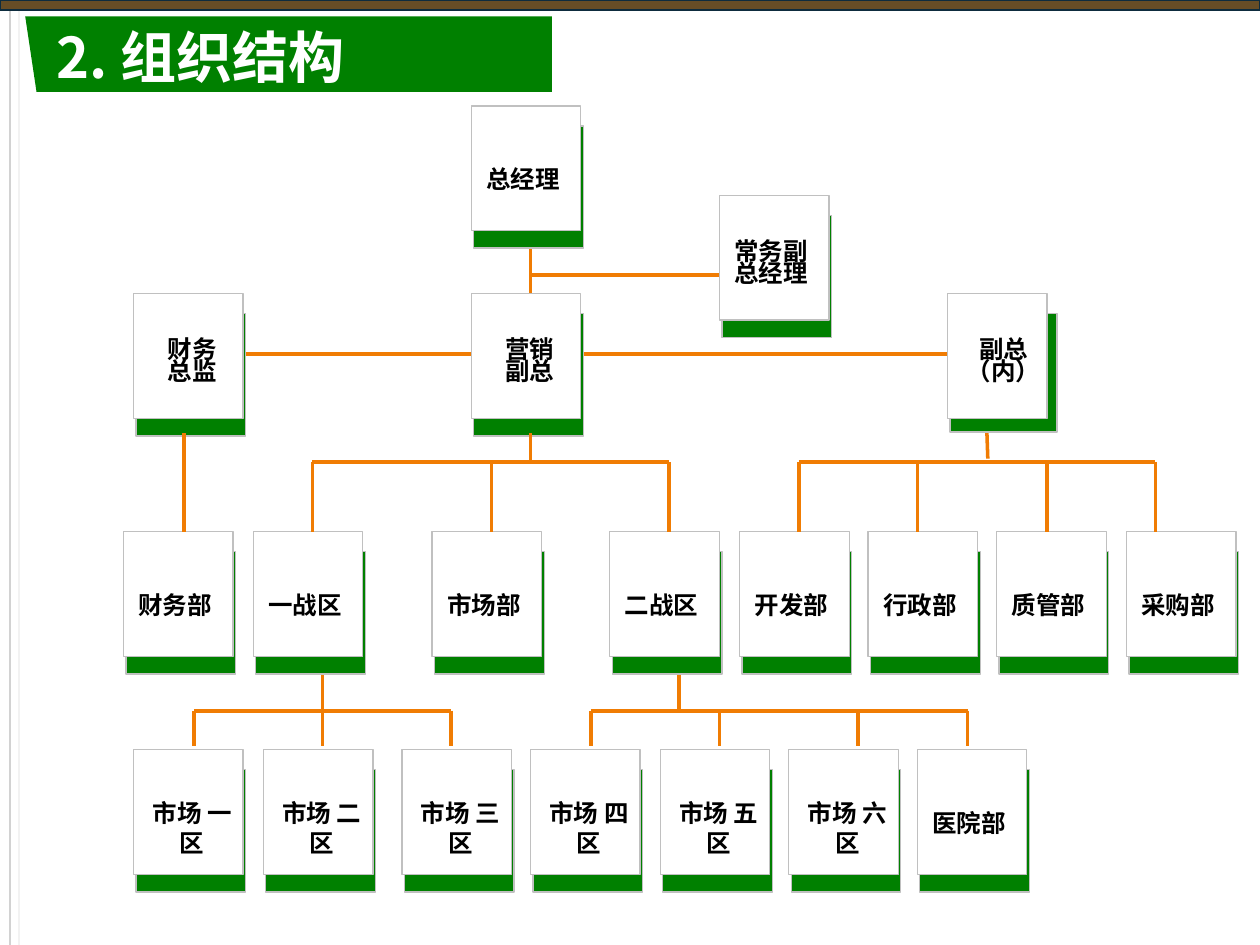
from pptx import Presentation
from pptx.dml.color import RGBColor
from pptx.enum.shapes import MSO_CONNECTOR as Connector, MSO_SHAPE as Shape
from pptx.enum.text import MSO_ANCHOR as Anchor, PP_ALIGN as Align
from pptx.oxml.ns import qn
from pptx.util import Inches, Pt
from lxml import etree

THEME = {
    "font": "Noto Sans CJK SC",
    "title_size": 32, "label_size": 14,
    "green": "008000", "orange": "F07C03", "white": "FFFFFF", "black": "000000",
    "card_line": "C0C0C0", "bar": "674D26", "bar_line": "0E2C3E",
    "pale": "F2F2F2", "grey": "A6A6A6",
}
TITLE = "2. 组织结构"
BANNER = [(0.2, 0.13), (4.38, 0.13), (4.38, 0.73), (0.29, 0.73)]

CARD_ROWS = [
    (0.84, [(3.74, ["总经理"], Align.LEFT)]),
    (1.55, [(5.71, ["常务副", "总经理"], Align.LEFT)]),
    (2.33, [(1.06, ["财务", "总监"], Align.CENTER),
            (3.74, ["营销", "副总"], Align.CENTER),
            (7.52, ["副总", "（内）"], Align.CENTER)]),
    (4.22, [(0.98, ["财务部"], Align.LEFT), (2.01, ["一战区"], Align.LEFT),
            (3.43, ["市场部"], Align.LEFT), (4.84, ["二战区"], Align.LEFT),
            (5.87, ["开发部"], Align.LEFT), (6.89, ["行政部"], Align.LEFT),
            (7.91, ["质管部"], Align.LEFT), (8.94, ["采购部"], Align.LEFT)]),
    (5.95, [(1.06, ["市场 一区"], Align.CENTER), (2.09, ["市场 二区"], Align.CENTER),
            (3.19, ["市场 三区"], Align.CENTER), (4.21, ["市场 四区"], Align.CENTER),
            (5.24, ["市场 五区"], Align.CENTER), (6.26, ["市场 六区"], Align.CENTER),
            (7.28, ["医院部"], Align.LEFT)]),
]
CARD = {"face": (0.87, 0.99), "back": (0.87, 0.97), "text": 0.89}
NARROW_CARD = {"face": (0.79, 0.99), "back": (0.85, 0.94), "text": 0.85}
NARROW_LABEL = "（内）"
TEXT_HEIGHT = 0.8

BACK_LINKS = [
    (5.39, 5.25, 5.39, 5.64, 2), (2.56, 5.32, 2.56, 5.64, 2),
    (4.21, 1.94, 4.21, 2.33, 2), (7.83, 3.36, 7.84, 3.64, 2),
    (1.93, 2.81, 7.6, 2.81, 2.25), (4.21, 2.18, 5.71, 2.18, 2.25),
]
FRONT_LINKS = [(4.21, 3.44, 4.21, 3.67, 2), (1.46, 3.44, 1.46, 4.22, 2)]
BRANCHES = [
    (3.67, 4.22, [2.48, 3.9, 5.31]),
    (3.67, 4.22, [6.34, 7.28, 8.31, 9.17]),
    (5.64, 5.92, [1.54, 2.56, 3.58]),
    (5.64, 5.92, [4.69, 5.71, 6.81, 7.68]),
]


def color(name):
    return RGBColor.from_string(THEME[name])


def paint(shape, fill, line=None, width=0.75):
    shape.shadow.inherit = False
    shape.fill.solid()
    shape.fill.fore_color.rgb = color(fill)
    if line:
        shape.line.color.rgb = color(line)
        shape.line.width = Pt(width)
    else:
        shape.line.fill.background()


def add_rectangle(shapes, left, top, width, height, fill, line, line_width=0.75):
    shape = shapes.add_shape(Shape.RECTANGLE, *map(Inches, (left, top, width, height)))
    paint(shape, fill, line, line_width)


def add_line(shapes, x1, y1, x2, y2, width, line="orange", alpha=None):
    connector = shapes.add_connector(Connector.STRAIGHT, *map(Inches, (x1, y1, x2, y2)))
    connector.line.color.rgb = color(line)
    connector.line.width = Pt(width)
    properties = connector._element.spPr
    if alpha:
        srgb = properties.find(".//" + qn("a:srgbClr"))
        etree.SubElement(srgb, qn("a:alpha"), val=str(alpha * 1000))
    etree.SubElement(properties, qn("a:effectLst"))


def add_text(shapes, box, lines, size, ink, anchor, layout):
    frame = shapes.add_textbox(*map(Inches, box)).text_frame
    frame.word_wrap = True
    frame.vertical_anchor = anchor
    for index, text in enumerate(lines):
        paragraph = frame.paragraphs[0] if index == 0 else frame.add_paragraph()
        for name, value in layout.items():
            setattr(paragraph, name, value)
        if index:
            paragraph.space_before = Pt(4)
        run = paragraph.add_run()
        run.text = text
        formats = {"name": THEME["font"], "size": Pt(THEME[size]), "bold": True}
        for name, value in formats.items():
            setattr(run.font, name, value)
        run.font.color.rgb = color(ink)
        etree.SubElement(run._r.get_or_add_rPr(), qn("a:ea"), typeface=THEME["font"])


def add_card(slide, left, top, lines, align):
    card = NARROW_CARD if NARROW_LABEL in lines else CARD
    shapes = slide.shapes.add_group_shape().shapes
    add_rectangle(shapes, left + 0.02, top + 0.16, *card["back"], "green", "card_line")
    add_rectangle(shapes, left, top, *card["face"], "white", "card_line")
    middle = top + (0.62 if len(lines) == 1 else 0.57)
    layout = {"alignment": align}
    if " " not in lines[0]:
        layout["line_spacing"] = 0.5
    box = (left + 0.02, middle - TEXT_HEIGHT / 2, card["text"], TEXT_HEIGHT)
    add_text(shapes, box, lines, "label_size", "black", Anchor.MIDDLE, layout)


def add_frame(slide):
    add_line(slide.shapes, 0.15, 0, 0.15, 7.5, 1, "pale")
    add_line(slide.shapes, 0.08, 0, 0.08, 7.5, 1, "grey", alpha=50)
    add_rectangle(slide.shapes, 0, 0, 10, 0.08, "bar", "bar_line", 1)


def add_title(slide):
    points = [(Inches(x), Inches(y)) for x, y in BANNER]
    builder = slide.shapes.build_freeform(*points[0])
    builder.add_line_segments(points[1:], close=True)
    paint(builder.convert_to_shape(), "green")
    add_text(slide.shapes, (0.35, 0.13, 3.94, 0.55), [TITLE], "title_size", "white",
             Anchor.TOP, {"alignment": Align.LEFT})


def main():
    presentation = Presentation()
    presentation.slide_width, presentation.slide_height = Inches(10), Inches(7.5)
    slide = presentation.slides.add_slide(presentation.slide_layouts[6])
    add_frame(slide)
    for link in BACK_LINKS:
        add_line(slide.shapes, *link)
    add_title(slide)
    for top, cards in CARD_ROWS:
        for left, lines, align in cards:
            add_card(slide, left, top, lines, align)
    for link in FRONT_LINKS:
        add_line(slide.shapes, *link)
    for top, bottom, drops in BRANCHES:
        add_line(slide.shapes, drops[0], top, drops[-1], top, 2.25)
        for x in drops:
            add_line(slide.shapes, x, top, x, bottom, 2)
    presentation.save("out.pptx")


if __name__ == "__main__":
    main()
